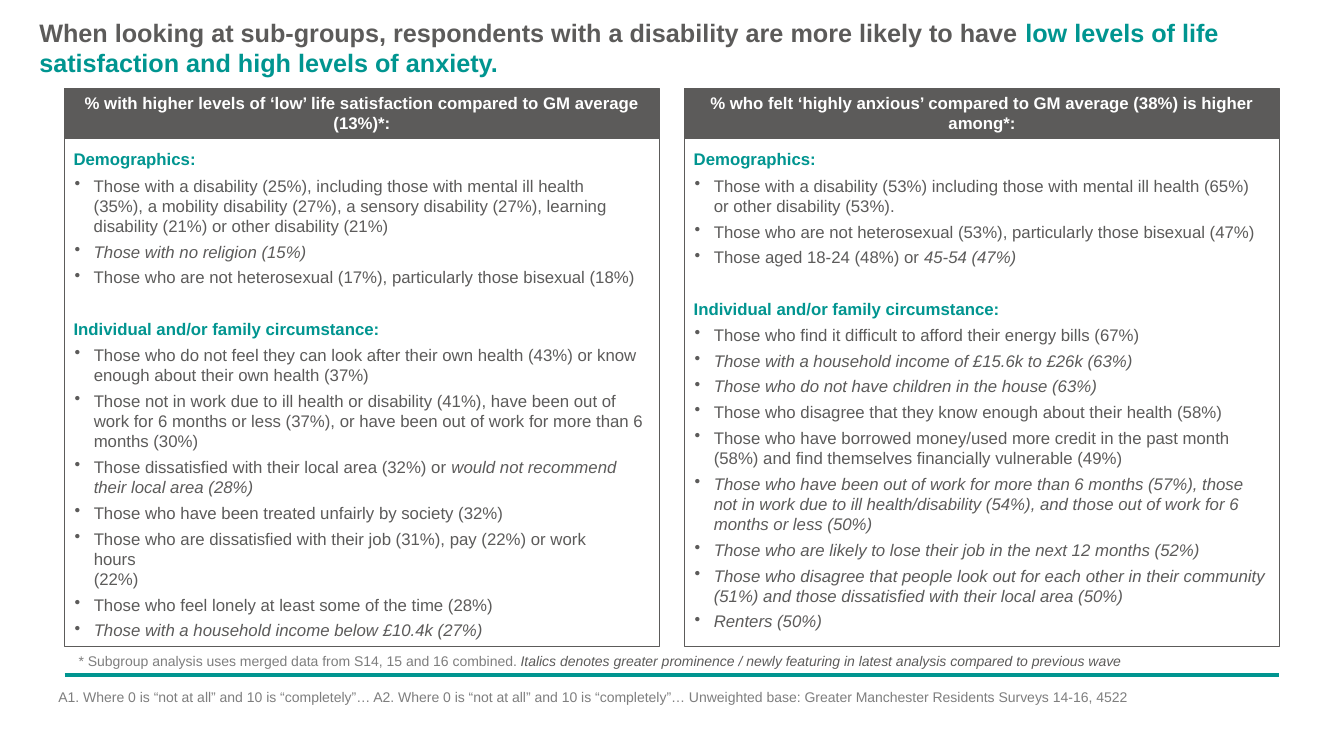
from lxml.etree import SubElement
from pptx import Presentation
from pptx.dml.color import RGBColor
from pptx.enum.shapes import MSO_CONNECTOR, MSO_SHAPE
from pptx.enum.text import MSO_ANCHOR, MSO_AUTO_SIZE, PP_ALIGN
from pptx.oxml.ns import qn
from pptx.util import Inches, Pt

COLORS = {"text": "5C5B5A", "teal": "009590", "note": "7E7E7E", "white": "FFFFFF"}
PANEL_W, HEAD_Y, BODY_Y, BODY_H = 5.9, 0.88, 1.37, 5.04

# In each item, underscores mark italics and a newline marks a line break.
PANELS = [
    {
        "x": 0.64, "mid": 3.15, "widths": (5.6, 5.69),
        "head": "% with higher levels of ‘low’ life satisfaction compared to GM average (13%)*:",
        "people": [
            "Those with a disability (25%), including those with mental ill health (35%), "
            "a mobility disability (27%), a sensory disability (27%), learning disability "
            "(21%) or other disability (21%)",
            "_Those with no religion (15%)_",
            "Those who are not heterosexual (17%), particularly those bisexual (18%)",
        ],
        "family": [
            "Those who do not feel they can look after their own health (43%) or know "
            "enough about their own health (37%)",
            "Those not in work due to ill health or disability (41%), have been out of work "
            "for 6 months or less (37%), or have been out of work for more than 6 months (30%)",
            "Those dissatisfied with their local area (32%) or _would not recommend "
            "their local area (28%)_",
            "Those who have been treated unfairly by society (32%)",
            "Those who are dissatisfied with their job (31%), pay (22%) or work \nhours\n(22%)",
            "Those who feel lonely at least some of the time (28%)",
            "_Those with a household income below £10.4k (27%)_",
        ],
    },
    {
        "x": 6.79, "mid": 2.95, "widths": (5.62, 5.7),
        "head": "% who felt ‘highly anxious’ compared to GM average (38%) is higher among*:",
        "people": [
            "Those with a disability (53%) including those with mental ill health (65%) "
            "or other disability (53%).",
            "Those who are not heterosexual (53%), particularly those bisexual (47%)",
            "Those aged 18-24 (48%) or _45-54 (47%)_",
        ],
        "family": [
            "Those who find it difficult to afford their energy bills (67%)",
            "_Those with a household income of £15.6k to £26k (63%)_",
            "_Those who do not have children in the house (63%)_",
            "Those who disagree that they know enough about their health (58%)",
            "Those who have borrowed money/used more credit in the past month (58%) "
            "and find themselves financially vulnerable (49%)",
            "_Those who have been out of work for more than 6 months (57%), those not in work "
            "due to ill health/disability (54%), and those out of work for 6 months or less (50%)_",
            "_Those who are likely to lose their job in the next 12 months (52%)_",
            "_Those who disagree that people look out for each other in their community (51%) "
            "and those dissatisfied with their local area (50%)_",
            "_Renters (50%)_",
        ],
    },
]


def color(name):
    return RGBColor.from_string(COLORS[name])


def set_font(font, size, tint, bold=False):
    font.name, font.size, font.bold = "Arial", Pt(size), bold
    font.color.rgb = color(tint)


def set_frame(frame):
    frame.word_wrap = True
    frame.auto_size = MSO_AUTO_SIZE.NONE
    frame.vertical_anchor = MSO_ANCHOR.TOP
    frame.margin_left = frame.margin_right = frame.margin_bottom = 0
    frame.margin_top = Inches(0.01)


def add_box(slide, x, y, w, h):
    frame = slide.shapes.add_textbox(Inches(x), Inches(y), Inches(w), Inches(h)).text_frame
    set_frame(frame)
    return frame


def add_para(frame, first, gap):
    para = frame.paragraphs[0] if first else frame.add_paragraph()
    para.space_before = Pt(gap)
    return para


def add_runs(para, text):
    for i, part in enumerate(text.split("_")):
        for j, line in enumerate(part.split("\n")):
            if j:
                para.add_line_break()
            if line:
                run = para.add_run()
                run.text = line
                if i % 2:
                    run.font.italic = True


def indent(para, left, hang=0.0):
    props = para._p.get_or_add_pPr()
    props.set("marL", str(Inches(left)))
    props.set("indent", str(Inches(-hang)))
    return props


def add_label(slide, text, x, y, w, h, tint, align=PP_ALIGN.LEFT):
    para = add_para(add_box(slide, x, y, w, h), True, 1)
    para.text, para.alignment = text, align
    set_font(para.font, 12, tint, True)


def add_list(slide, items, x, y, w, h):
    frame = add_box(slide, x, y, w, h)
    for i, item in enumerate(items):
        para = add_para(frame, i == 0, 4 if i else 1)
        set_font(para.font, 12, "text")
        SubElement(indent(para, 0.2, 0.19), qn("a:buChar"), char="•")
        add_runs(para, item)


def add_rect(slide, x, y, w, h, filled):
    rect = slide.shapes.add_shape(
        MSO_SHAPE.RECTANGLE, Inches(x), Inches(y), Inches(w), Inches(h))
    rect.shadow.inherit = False
    if filled:
        rect.fill.solid()
        rect.fill.fore_color.rgb = color("text")
    else:
        rect.fill.background()
    rect.line.color.rgb = color("text")
    rect.line.width = Pt(0.75)


def add_panel(slide, panel):
    x, mid = panel["x"], panel["mid"]
    left = x + 0.09
    add_rect(slide, x, HEAD_Y, PANEL_W, BODY_Y - HEAD_Y, True)
    add_rect(slide, x, BODY_Y, PANEL_W, BODY_H, False)
    add_label(slide, panel["head"], x + 0.1, 0.91, 5.7, 0.43, "white", PP_ALIGN.CENTER)
    groups = [("Demographics:", "people", 1.47, 1.1),
              ("Individual and/or family circumstance:", "family", mid, 2.9)]
    for (label, key, y, h), w in zip(groups, panel["widths"]):
        add_label(slide, label, left, y, w, 0.23, "teal")
        add_list(slide, panel[key], left, y + 0.26, w, h)


def add_title(slide):
    title = slide.shapes.title
    title.left, title.top = Inches(0.38), Inches(0.16)
    title.width, title.height = Inches(11.8), Inches(0.63)
    set_frame(title.text_frame)
    para = add_para(title.text_frame, True, 1)
    para.alignment = PP_ALIGN.LEFT
    indent(para, 0.01)
    for text, tint in [
        ("When looking at sub-groups, respondents with a disability are more likely to have ",
         "text"),
        ("low levels of life satisfaction and high levels of anxiety.", "teal"),
    ]:
        run = para.add_run()
        run.text = text
        set_font(run.font, 18, tint, True)


def add_notes(slide):
    frame = add_box(slide, 0.57, 6.46, 11.5, 0.54)
    for i, (text, left, gap) in enumerate([
        ("* Subgroup analysis uses merged data from S14, 15 and 16 combined. _Italics denotes "
         "greater prominence / newly featuring in latest analysis compared to previous wave_",
         0.21, 1),
        ("A1. Where 0 is “not at all” and 10 is “completely”… A2. Where 0 is “not at all” and "
         "10 is “completely”… Unweighted base: Greater Manchester Residents Surveys 14-16, 4522",
         0.01, 14),
    ]):
        para = add_para(frame, i == 0, gap)
        set_font(para.font, 10, "note")
        indent(para, left)
        add_runs(para, text)
    frame.paragraphs[0].runs[1].font.color.rgb = color("text")


def add_rule(slide):
    rule = slide.shapes.add_connector(
        MSO_CONNECTOR.STRAIGHT, Inches(0.64), Inches(6.7), Inches(12.69), Inches(6.7))
    rule.line.color.rgb = color("teal")
    rule.line.width = Pt(3)
    SubElement(rule._element.spPr, qn("a:effectLst"))


def main():
    deck = Presentation()
    deck.slide_width, deck.slide_height = Inches(13.33), Inches(7.5)
    slide = deck.slides.add_slide(deck.slide_layouts[5])
    add_rule(slide)
    add_title(slide)
    for panel in PANELS:
        add_panel(slide, panel)
    add_notes(slide)
    deck.save("out.pptx")


if __name__ == "__main__":
    main()
